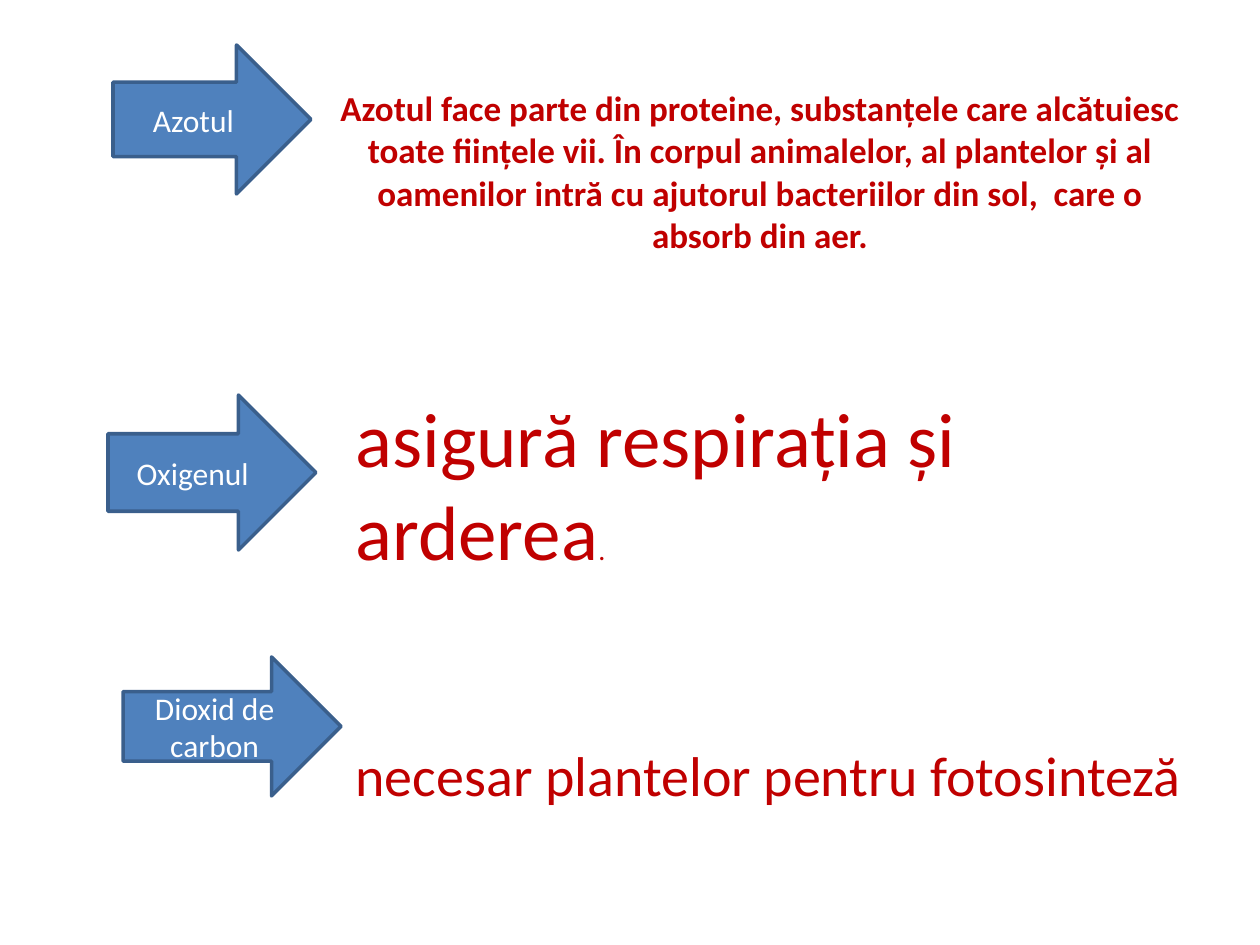
from lxml.etree import SubElement
from pptx import Presentation
from pptx.dml.color import RGBColor
from pptx.enum.shapes import MSO_SHAPE as Shape
from pptx.enum.text import MSO_ANCHOR as Anchor, MSO_AUTO_SIZE as AutoSize, PP_ALIGN as Align
from pptx.oxml.ns import qn
from pptx.util import Emu, Pt

EMU_PER_PX = 914400 / 126
RED = "C00000"
WHITE = "FFFFFF"


def px(length):
    return Emu(round(length * EMU_PER_PX))


def color(hex_string):
    return RGBColor.from_string(hex_string)


def place(shape, box):
    shape.left, shape.top, shape.width, shape.height = map(px, box)


def set_font(font, size, hex_string, bold=False):
    font.name = "Calibri"
    font.size = Pt(size)
    font.bold = bold
    font.color.rgb = color(hex_string)


def add_title(slide, box, text):
    title = slide.shapes.title
    place(title, box)
    frame = title.text_frame
    frame.text = text
    frame.auto_size = AutoSize.NONE
    frame.vertical_anchor = Anchor.MIDDLE
    paragraph = frame.paragraphs[0]
    paragraph.alignment = Align.CENTER
    set_font(paragraph.font, 20, RED, bold=True)


def add_body(slide, box):
    body = slide.placeholders[1]
    place(body, box)
    body.fill.solid()
    body.fill.fore_color.rgb = color(WHITE)
    fill_color = next(body._element.spPr.iter(qn("a:srgbClr")))
    SubElement(fill_color, qn("a:alpha"), val="65000")

    frame = body.text_frame
    frame.auto_size = AutoSize.NONE
    frame.margin_top = px(116)
    oxygen = frame.paragraphs[0]
    carbon_dioxide = frame.add_paragraph()
    for paragraph, space_before in ((oxygen, 0), (carbon_dioxide, 94)):
        properties = paragraph._p.get_or_add_pPr()
        properties.set("marL", "0")
        properties.set("indent", "0")
        SubElement(properties, qn("a:buNone"))
        paragraph.space_before = Pt(space_before)

    for text, size in (("asigură respirația și arderea", 44), (".", 16)):
        run = oxygen.add_run()
        run.text = text
        set_font(run.font, size, RED)
    carbon_dioxide.text = "necesar plantelor pentru fotosinteză"
    set_font(carbon_dioxide.font, 32, RED)


def add_arrow(slide, box, text):
    arrow = slide.shapes.add_shape(Shape.RIGHT_ARROW, *map(px, box))
    arrow.shadow.inherit = False
    arrow.fill.solid()
    arrow.fill.fore_color.rgb = color("4F81BD")
    arrow.line.color.rgb = color("3A5F8C")
    arrow.line.width = Pt(2)
    frame = arrow.text_frame
    frame.text = text
    frame.word_wrap = True
    frame.vertical_anchor = Anchor.MIDDLE
    paragraph = frame.paragraphs[0]
    paragraph.alignment = Align.CENTER
    set_font(paragraph.font, 18, WHITE)


def main():
    presentation = Presentation()
    presentation.slide_width = px(1260)
    presentation.slide_height = px(945)
    slide = presentation.slides.add_slide(presentation.slide_layouts[1])
    add_title(
        slide,
        (323, 38, 874, 266),
        "Azotul face parte din proteine, substanțele care alcătuiesc toate ființele vii. "
        "În corpul animalelor, al plantelor și al oamenilor intră cu ajutorul "
        "bacteriilor din sol,  care o absorb din aer.",
    )
    add_body(slide, (343, 275, 854, 535))
    for text, box in (
        ("Azotul", (113, 45, 198, 149)),
        ("Oxigenul", (108, 395, 208, 155)),
        ("Dioxid de carbon", (123, 657, 218, 139)),
    ):
        add_arrow(slide, box, text)
    presentation.save("out.pptx")


if __name__ == "__main__":
    main()
